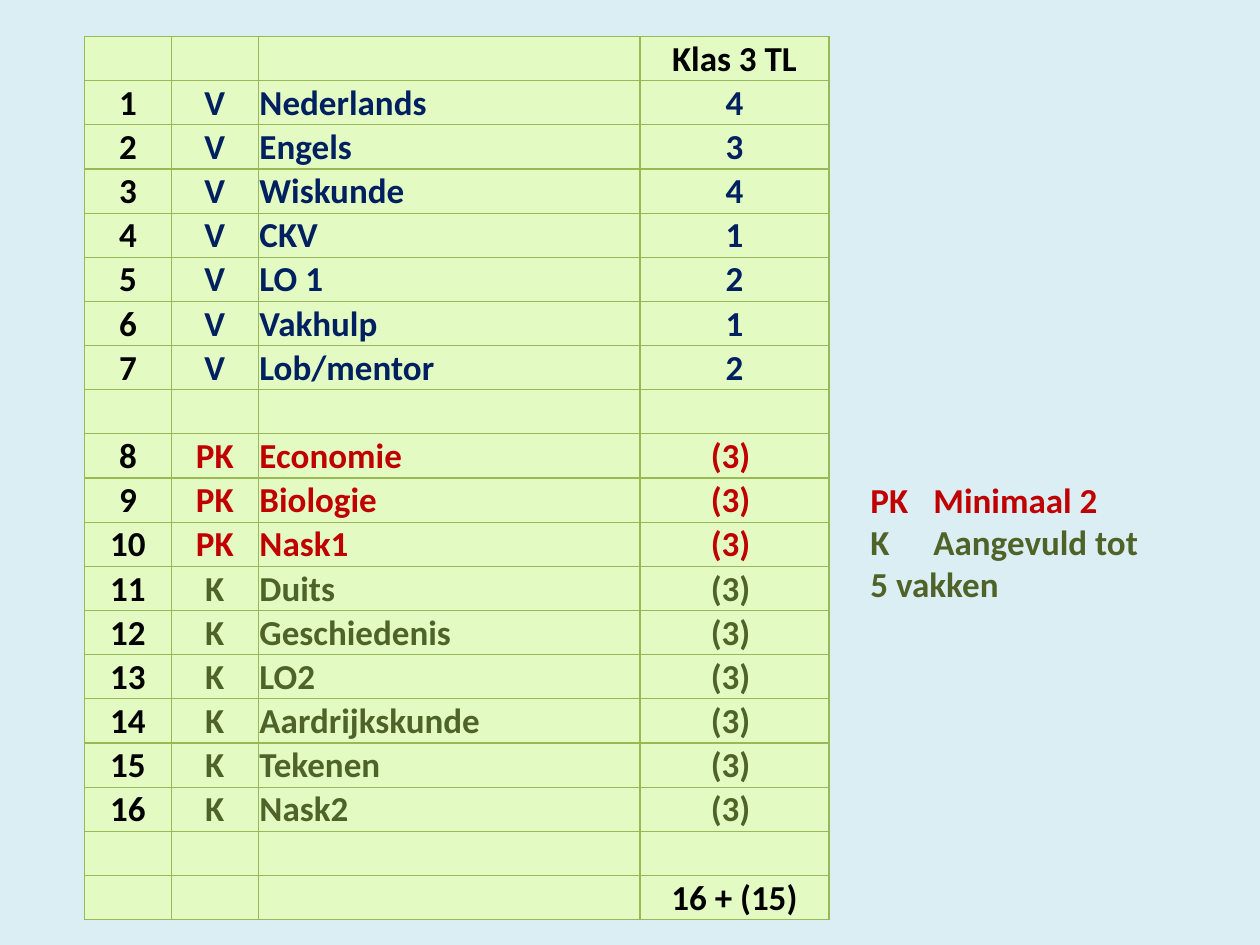
"""Build a slide with the lesson table of Klas 3 TL and a note on choosing subjects."""
import lxml.etree
import pptx
import pptx.dml.color
import pptx.enum.text
import pptx.oxml.ns
import pptx.util

Inches = pptx.util.Inches
Pt = pptx.util.Pt
ALIGN = pptx.enum.text.PP_ALIGN
COLOURS = {"background": "DBEEF4", "cell": "E3FAC3", "border": "98B955",
           "text": "000000", "V": "002060", "PK": "C00000", "K": "4F6228"}
FONT = {"name": "Calibri", "size": Pt(20), "bold": True}
CELL = {"margin_left": Inches(0.01), "margin_right": Inches(0.01),
        "margin_top": Inches(0.01), "margin_bottom": 0,
        "vertical_anchor": pptx.enum.text.MSO_ANCHOR.BOTTOM}
COLUMN_WIDTHS = [0.69, 0.69, 3.03, 1.5]
ROW_HEIGHT = 0.35
SUBJECTS = {
    "V": [("Nederlands", "4"), ("Engels", "3"), ("Wiskunde", "4"), ("CKV", "1"),
          ("LO 1", "2"), ("Vakhulp", "1"), ("Lob/mentor", "2")],
    "PK": [(name, "(3)\N{NO-BREAK SPACE}") for name in ("Economie", "Biologie", "Nask1")],
    "K": [(name, "(3)\N{NO-BREAK SPACE}") for name in
          ("Duits", "Geschiedenis", "LO2", "Aardrijkskunde", "Tekenen", "Nask2")],
}


def write(paragraph, text, colour):
    for name, value in FONT.items():
        setattr(paragraph.font, name, value)
    if text:
        run = paragraph.add_run()
        run.text = text
        for name, value in FONT.items():
            setattr(run.font, name, value)
        run.font.color.rgb = pptx.dml.color.RGBColor.from_string(COLOURS[colour])


def add_borders(cell):
    properties = cell._tc.get_or_add_tcPr()
    for side in ("a:lnL", "a:lnR", "a:lnT", "a:lnB"):
        line = lxml.etree.SubElement(properties, pptx.oxml.ns.qn(side), w=str(Pt(0.75)))
        fill = lxml.etree.SubElement(line, pptx.oxml.ns.qn("a:solidFill"))
        lxml.etree.SubElement(fill, pptx.oxml.ns.qn("a:srgbClr"), val=COLOURS["border"])


presentation = pptx.Presentation()
presentation.slide_width = Inches(10)
presentation.slide_height = Inches(7.5)
slide = presentation.slides.add_slide(presentation.slide_layouts[6])
slide.background.fill.solid()
slide.background.fill.fore_color.rgb = pptx.dml.color.RGBColor.from_string(COLOURS["background"])

empty_row = ("", "", "", "")
rows = [("", "", "", "Klas 3 TL")]
number = 0
for kind, subjects in SUBJECTS.items():
    for subject, hours in subjects:
        number += 1
        rows.append((str(number), kind, subject, hours))
    if kind == "V":
        rows.append(empty_row)
rows += [empty_row, ("", "", "", "16 + (15)")]

table = slide.shapes.add_table(
    len(rows), len(COLUMN_WIDTHS), Inches(0.67), Inches(0.29),
    Inches(sum(COLUMN_WIDTHS)), Inches(ROW_HEIGHT * len(rows))).table
table.first_row = False
table.horz_banding = False
for column, width in zip(table.columns, COLUMN_WIDTHS):
    column.width = Inches(width)

for row, values in zip(table.rows, rows):
    row.height = Inches(ROW_HEIGHT)
    for index, (cell, text) in enumerate(zip(row.cells, values)):
        for name, value in CELL.items():
            setattr(cell, name, value)
        add_borders(cell)
        cell.fill.solid()
        cell.fill.fore_color.rgb = pptx.dml.color.RGBColor.from_string(COLOURS["cell"])
        paragraph = cell.text_frame.paragraphs[0]
        paragraph.alignment = ALIGN.LEFT if index == 2 else ALIGN.CENTER
        write(paragraph, text, values[1] if index and values[1] else "text")

note = slide.shapes.add_textbox(Inches(6.81), Inches(3.75), Inches(2.72), Inches(1.78)).text_frame
note.word_wrap = True
write(note.paragraphs[0], "PK \tMinimaal 2", "PK")
write(note.add_paragraph(), "K\tAangevuld tot \t5 vakken", "K")

presentation.save("out.pptx")
